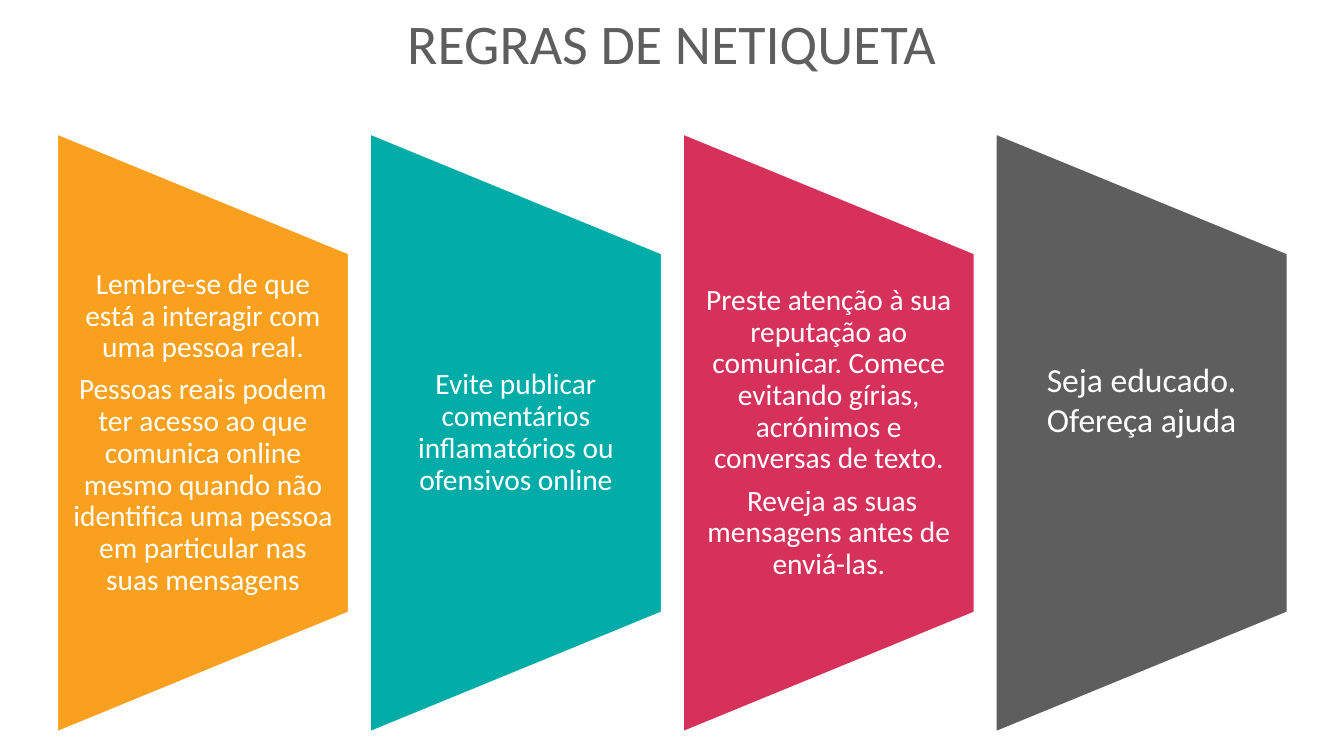
"""Build the slide with four netiquette rules on coloured panels."""
from pptx import Presentation
from pptx.dml.color import RGBColor
from pptx.enum.shapes import MSO_SHAPE as SHAPE
from pptx.enum.text import MSO_ANCHOR as ANCHOR, MSO_AUTO_SIZE as AUTO, PP_ALIGN as ALIGN
from pptx.util import Pt


def rgb(value):
    return RGBColor.from_string(value)


def add_run(p, text, size, color):
    r = p.add_run()
    r.text = text
    r.font.name = "Calibri"
    r.font.size = Pt(size)
    r.font.color.rgb = rgb(color)


WHITE, GRAY = "FFFFFF", "5E5E5E"
LEFT, PITCH, CENTER_Y = 41, 223.5, 309.2
PANEL_W, PANEL_H, TEXT_H = 208, 427, 256
PANELS = [
    ("F9A01E", ["Lembre-se de que está a interagir com uma pessoa real.",
                "Pessoas reais podem ter acesso ao que comunica online mesmo quando "
                "não identifica uma pessoa em particular nas suas mensagens"]),
    ("00ACA7", ["Evite publicar comentários inflamatórios ou ofensivos online"]),
    ("D6315A", ["Preste atenção à sua reputação ao comunicar. Comece evitando gírias, "
                "acrónimos e conversas de texto.",
                " Reveja as suas mensagens antes de enviá-las."]),
    (GRAY, []),
]

prs = Presentation()
prs.slide_width, prs.slide_height = Pt(960), Pt(540)
s = prs.slides.add_slide(prs.slide_layouts[5])

title = s.shapes.title
title.left, title.top, title.width, title.height = Pt(283.7), Pt(8), Pt(415), Pt(75)
tf = title.text_frame
tf.word_wrap = True
tf.auto_size = AUTO.NONE
tf.vertical_anchor = ANCHOR.TOP
p = tf.paragraphs[0]
p.alignment = ALIGN.LEFT
p.line_spacing = 0.9
p.space_before = Pt(0)
add_run(p, "REGRAS DE NETIQUETA", 40, GRAY)

for i, (color, rules) in enumerate(PANELS):
    left = LEFT + i * PITCH
    sp = s.shapes.add_shape(
        SHAPE.FLOWCHART_MANUAL_OPERATION,
        Pt(left + (PANEL_W - PANEL_H) / 2), Pt(CENTER_Y - PANEL_W / 2),
        Pt(PANEL_H), Pt(PANEL_W))
    sp.rotation = 270
    sp.shadow.inherit = False
    sp.fill.solid()
    sp.fill.fore_color.rgb = rgb(color)
    sp.line.color.rgb = rgb(WHITE)
    sp.line.width = Pt(1)
    if not rules:
        continue
    box = s.shapes.add_textbox(Pt(left), Pt(CENTER_Y - TEXT_H / 2), Pt(PANEL_W), Pt(TEXT_H))
    tf = box.text_frame
    tf.word_wrap = True
    tf.vertical_anchor = ANCHOR.MIDDLE
    tf.margin_left = tf.margin_right = Pt(10.5)
    tf.margin_top = tf.margin_bottom = Pt(0)
    for j, rule in enumerate(rules):
        p = tf.add_paragraph() if j else tf.paragraphs[0]
        p.alignment = ALIGN.CENTER
        p.line_spacing = 0.9
        p.space_after = Pt(7.35)
        add_run(p, rule, 21, WHITE)

box = s.shapes.add_textbox(Pt(738), Pt(252.7), Pt(155), Pt(94))
tf = box.text_frame
tf.word_wrap = False
for j, line in enumerate(["Seja educado.", "Ofereça ajuda"]):
    p = tf.add_paragraph() if j else tf.paragraphs[0]
    p.alignment = ALIGN.CENTER
    add_run(p, line, 24, WHITE)

prs.save("out.pptx")
